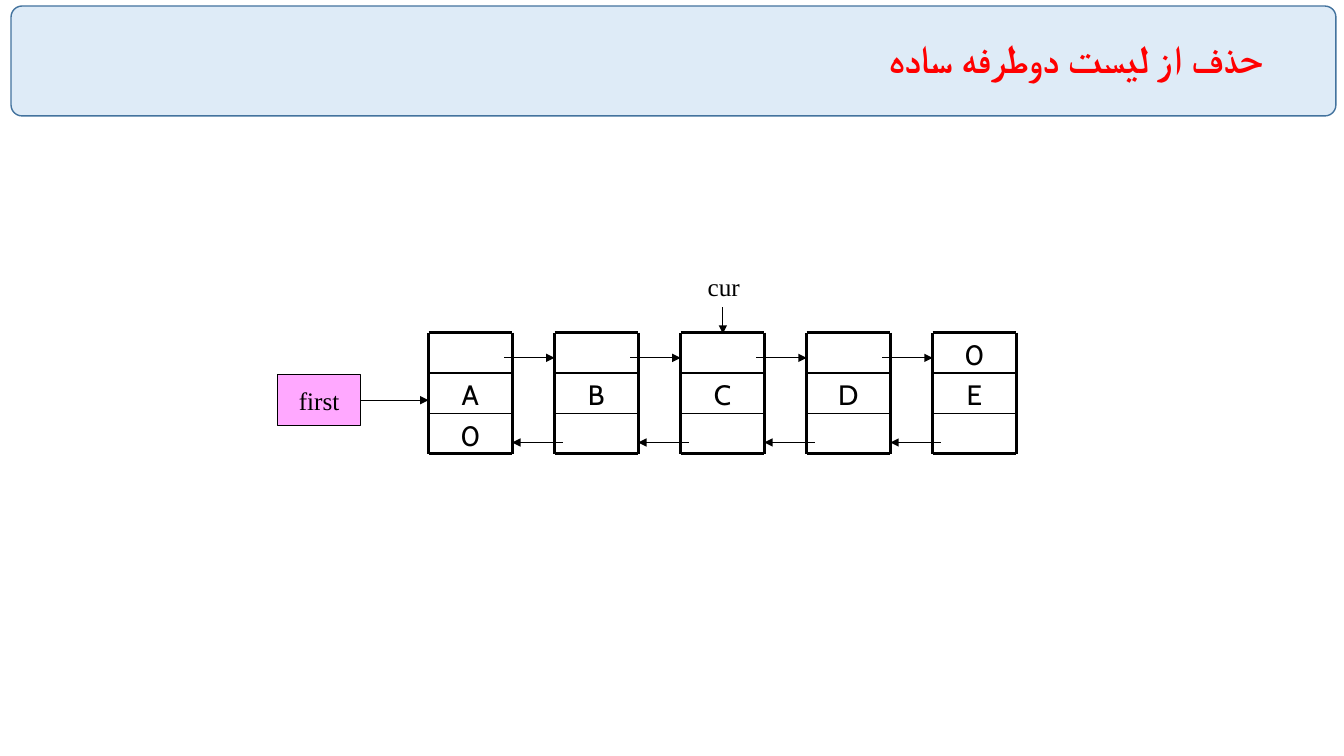
from lxml import etree
from pptx import Presentation
from pptx.dml.color import RGBColor
from pptx.enum.shapes import MSO_CONNECTOR, MSO_SHAPE
from pptx.enum.text import MSO_ANCHOR, MSO_AUTO_SIZE, PP_ALIGN
from pptx.oxml.ns import qn
from pptx.util import Inches, Pt

STRAIGHT = MSO_CONNECTOR.STRAIGHT
RECTANGLE, ROUNDED = MSO_SHAPE.RECTANGLE, MSO_SHAPE.ROUNDED_RECTANGLE
MIDDLE = MSO_ANCHOR.MIDDLE
NO_AUTOFIT = MSO_AUTO_SIZE.NONE
LEFT, CENTER, RIGHT = PP_ALIGN.LEFT, PP_ALIGN.CENTER, PP_ALIGN.RIGHT

BLACK = RGBColor(0x00, 0x00, 0x00)
RED = RGBColor(0xFF, 0x00, 0x00)
MAGENTA = RGBColor(0xFF, 0x00, 0xFF)
PALE_BLUE = RGBColor(0xDE, 0xEB, 0xF7)
STEEL_BLUE = RGBColor(0x43, 0x73, 0x9E)

# Node geometry in inches
NODE_LEFT, NODE_TOP, NODE_PITCH = 4.25, 3.3, 1.25
NODE_WIDTH, CELL_HEIGHT = 0.83, 0.4
NODE_BOTTOM = NODE_TOP + 3 * CELL_HEIGHT
LINK_INSET = 0.08
NEXT_Y, PREVIOUS_Y, FIRST_Y = 3.55, 4.39, 3.97

# Cells of each node: next link, data, previous link
NODES = [("", "A", "0"), ("", "B", ""), ("", "C", ""), ("", "D", ""), ("0", "E", "")]


def format_text(shape, text, font, size, color=BLACK, align=CENTER):
    shape.text_frame.text = text
    paragraph = shape.text_frame.paragraphs[0]
    paragraph.alignment = align
    run = paragraph.runs[0]
    run.font.name = font
    run.font.size = Pt(size)
    run.font.color.rgb = color
    return paragraph


def add_text(slide, box, text, font, size, align=CENTER, wrap=True):
    shape = slide.shapes.add_textbox(*map(Inches, box))
    shape.text_frame.word_wrap = wrap
    format_text(shape, text, font, size, align=align)


def add_box(slide, kind, box, fill, line, width):
    shape = slide.shapes.add_shape(kind, *map(Inches, box))
    shape.shadow.inherit = False
    shape.fill.solid()
    shape.fill.fore_color.rgb = fill
    shape.line.color.rgb = line
    shape.line.width = Pt(width)
    return shape


def add_line(slide, start, end, width=0.75, arrow=False):
    line = slide.shapes.add_connector(STRAIGHT, *map(Inches, (*start, *end)))
    line.line.color.rgb = BLACK
    line.line.width = Pt(width)
    if arrow:
        etree.SubElement(line.line._get_or_add_ln(), qn("a:tailEnd"), type="triangle")
    etree.SubElement(line._element.spPr, qn("a:effectLst"))


def add_node(slide, left, cells):
    right = left + NODE_WIDTH
    for row, text in enumerate(cells):
        if text:
            top = NODE_TOP + row * CELL_HEIGHT
            add_text(slide, (left, top, NODE_WIDTH, CELL_HEIGHT), text, "Cabin", 20)
    for row, width in enumerate((2.25, 1, 1, 2.25)):
        y = NODE_TOP + row * CELL_HEIGHT
        add_line(slide, (left, y), (right, y), width)
    for x in (left, right):
        add_line(slide, (x, NODE_TOP), (x, NODE_BOTTOM), 2.25)


def add_links(slide, left):
    """Join the node at left with its successor in both directions."""
    right, successor = left + NODE_WIDTH, left + NODE_PITCH
    add_line(slide, (right - LINK_INSET, NEXT_Y), (successor, NEXT_Y), arrow=True)
    add_line(slide, (successor + LINK_INSET, PREVIOUS_Y), (right, PREVIOUS_Y), arrow=True)


def add_first_pointer(slide):
    box = add_box(slide, RECTANGLE, (2.75, 3.72, NODE_WIDTH, 0.5), MAGENTA, BLACK, 0.75)
    color = box._element.spPr.find(qn("a:solidFill"))[0]
    etree.SubElement(color, qn("a:alpha"), val="34000")
    box.text_frame.word_wrap = False
    box.text_frame.vertical_anchor = MIDDLE
    format_text(box, "first", "Times New Roman", 18)
    add_line(slide, (2.75 + NODE_WIDTH, FIRST_Y), (NODE_LEFT, FIRST_Y), arrow=True)


def add_current_pointer(slide):
    add_text(slide, (6.92, 2.64, 0.52, 0.4), "cur", "Times New Roman", 18, LEFT, False)
    add_line(slide, (7.17, 3.05), (7.17, 3.31), arrow=True)


def set_title(slide, text):
    title = slide.shapes.title
    title.left, title.top, title.width, title.height = map(Inches, (0.24, 0.15, 12.39, 0.9))
    title.text_frame.auto_size = NO_AUTOFIT
    title.text_frame.vertical_anchor = MIDDLE
    paragraph = format_text(title, text, "Calibri", 28, RED, RIGHT)
    paragraph.line_spacing = 0.9
    paragraph._p.get_or_add_pPr().set("rtl", "1")
    run = paragraph.runs[0]
    run.font.bold = True
    etree.SubElement(run._r.get_or_add_rPr(), qn("a:cs"), typeface="Calibri")
    # Bring the title in front of the banner
    slide.shapes._spTree.append(title._element)


def main():
    presentation = Presentation()
    presentation.slide_width, presentation.slide_height = Inches(13.33), Inches(7.5)
    slide = presentation.slides.add_slide(presentation.slide_layouts[5])

    # Title banner
    banner = add_box(slide, ROUNDED, (0.11, 0.06, 13.14, 1.09), PALE_BLUE, STEEL_BLUE, 1)
    banner.adjustments[0] = 0.1
    set_title(slide, "حذف از ليست دوطرفه ساده")

    # Doubly linked list
    lefts = [NODE_LEFT + index * NODE_PITCH for index in range(len(NODES))]
    for left, cells in zip(lefts, NODES):
        add_node(slide, left, cells)
    for left in lefts[:-1]:
        add_links(slide, left)

    # Pointers into the list
    add_first_pointer(slide)
    add_current_pointer(slide)

    presentation.save("out.pptx")


if __name__ == "__main__":
    main()
